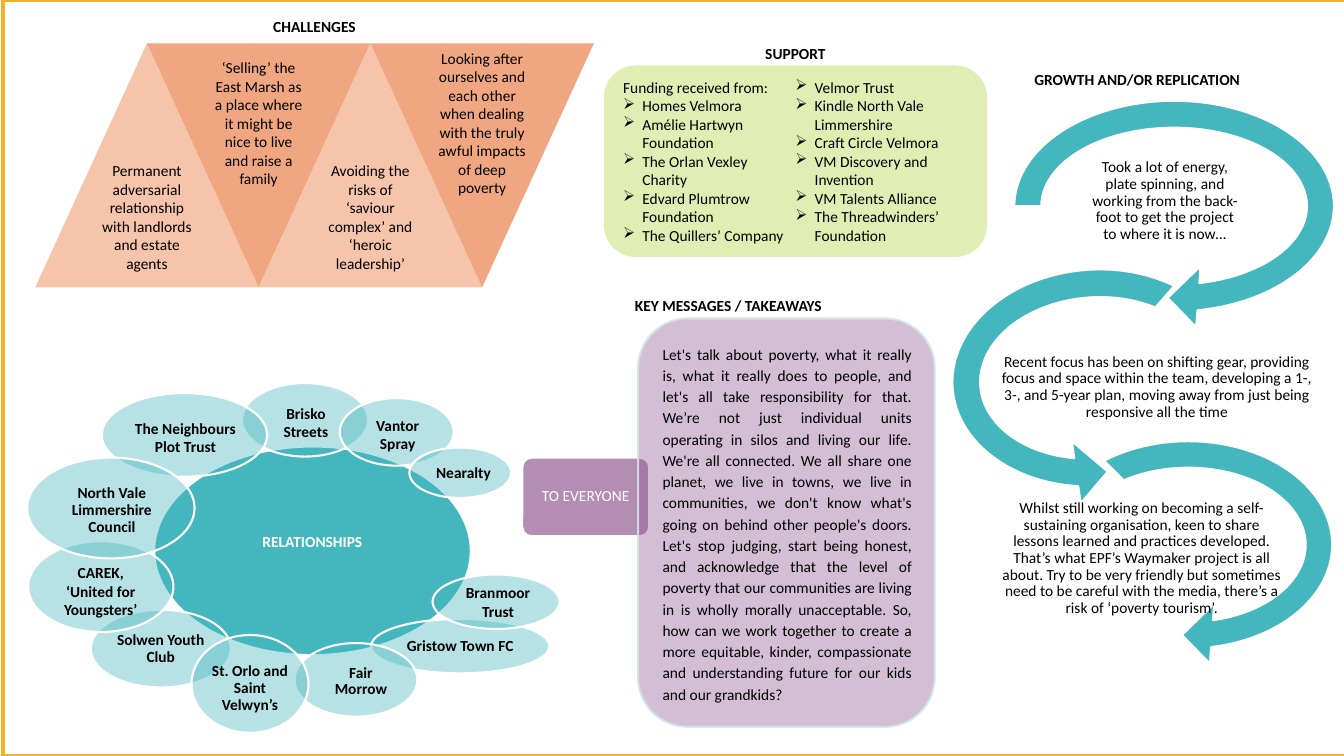
from lxml import etree
from pptx import Presentation
from pptx.dml.color import RGBColor
from pptx.enum.shapes import MSO_SHAPE
from pptx.enum.text import MSO_ANCHOR, PP_ALIGN
from pptx.oxml.ns import qn
from pptx.util import Inches, Pt

OVAL = MSO_SHAPE.OVAL
RECT = MSO_SHAPE.RECTANGLE
ROUND = MSO_SHAPE.ROUNDED_RECTANGLE
PEAK = MSO_SHAPE.ISOSCELES_TRIANGLE
MERGE = MSO_SHAPE.FLOWCHART_MERGE
ARC = MSO_SHAPE.CIRCULAR_ARROW
LEFT_ARC = MSO_SHAPE.LEFT_CIRCULAR_ARROW
TOP, MIDDLE = MSO_ANCHOR.TOP, MSO_ANCHOR.MIDDLE
LEFT, CENTER = PP_ALIGN.LEFT, PP_ALIGN.CENTER
RIGHT, JUSTIFY = PP_ALIGN.RIGHT, PP_ALIGN.JUSTIFY

FONT = "Calibri"
SIZE = 11
OVAL_PAD = 0.146
COLORS = {
    "black": "000000", "white": "FFFFFF", "gold": "F5B02A",
    "green": "AACE2E", "peach": "F5C4AB", "orange": "F0A781",
    "teal": "44B6BD", "purple": "935E94", "ice": "CFE5E8",
}

FUNDERS = [
    "Homes Velmora", "Amélie Hartwyn Foundation", "The Orlan Vexley Charity",
    "Edvard Plumtrow Foundation", "The Quillers’ Company", "Velmor Trust",
    "Kindle North Vale Limmershire", "Craft Circle Velmora",
    "VM Discovery and Invention", "VM Talents Alliance",
    "The Threadwinders’ Foundation",
]
RISKS = [
    "Permanent adversarial relationship with landlords and estate agents",
    "‘Selling’ the East Marsh as a place where it might be nice to live and raise a family",
    "Avoiding the risks of ‘saviour complex’ and ‘heroic leadership’",
    "Looking after ourselves and each other when dealing with the truly awful impacts of deep poverty",
]
STAGES = [
    (ARC, (0.71, 0.18, 3.51, 2.43), 0, (45, 108), (1.64, 0.68, 1.47, 1.33),
     "Took a lot of energy, plate spinning, and working from the back-foot to get the project to where it is now…"),
    (LEFT_ARC, (0.09, 1.85, 3.17, 2.5), 355.9, (63, 189), (0.71, 2.54, 3.17, 1.3),
     "Recent focus has been on shifting gear, providing focus and space within the team, developing a 1-, 3-, and 5-year plan, moving away from just being responsive all the time"),
    (ARC, (1.01, 3.56, 3.19, 2.39), 0, (45, 135), (0.73, 3.94, 2.83, 1.9),
     "Whilst still working on becoming a self-sustaining organisation, keen to share lessons learned and practices developed. That’s what EPF’s Waymaker project is all about. Try to be very friendly but sometimes need to be careful with the media, there’s a risk of ‘poverty tourism’."),
]
MESSAGE = (
    "Let's talk about poverty, what it really is, what it really does to people, and let's all take "
    "responsibility for that. We’re not just individual units operating in silos and living our life. "
    "We're all connected. We all share one planet, we live in towns, we live in communities, we don't "
    "know what's going on behind other people's doors. Let's stop judging, start being honest, and "
    "acknowledge that the level of poverty that our communities are living in is wholly morally "
    "unacceptable. So, how can we work together to create a more equitable, kinder, compassionate and "
    "understanding future for our kids and our grandkids?"
)
PARTNERS = [
    ("Gristow Town FC", (3.41, 2.34, 1.77, 0.54), (0.12, 0.12), 0, 0.9, CENTER),
    ("Fair Morrow", (2.65, 2.58, 1.22, 0.73), (0.36, 0.26), 0.03, 0.9, CENTER),
    ("Solwen Youth Club", (0.63, 2.25, 1.39, 0.77), (0.12, 0.12), 0.01, 0.9, CENTER),
    ("St. Orlo and Saint Velwyn’s", (1.63, 2.5, 1.16, 0.97), (0.16, 0.12), 0.09, 0.9, CENTER),
    ("CAREK, ‘United for Youngsters’", (0.01, 1.57, 1.44, 0.9), (0.24, 0.24), 0.09, 1, CENTER),
    ("Brisko Streets", (2.13, 0, 1.25, 0.73), (0.31, 0.29), 0.05, 1, CENTER),
    ("Vantor Spray", (3.1, 0.15, 1.13, 0.67), (0.31, 0.29), 0.05, 1, CENTER),
    ("Nearalty", (3.79, 0.64, 1.01, 0.5), (0.12, 0.2), 0, 1, RIGHT),
    ("The Neighbours Plot Trust", (0.74, 0.1, 1.64, 0.83), (0.31, 0.29), 0.05, 1, CENTER),
    ("North Vale Limmershire Council", (0, 0.74, 1.66, 1), (0.31, 0.29), 0.05, 0.9, CENTER),
    ("Branmoor Trust", (4.02, 1.9, 1.26, 0.54), (0.26, 0.22), 0, 1, CENTER),
]


def shift(box, part):
    return box[0] + part[0], box[1] + part[1], part[2], part[3]


def fade(fill, alpha):
    color = fill._xPr.find(qn("a:solidFill"))[0]
    etree.SubElement(color, qn("a:alpha"), val=str(alpha * 1000))


def draw(slide, kind, box, fill=None, alpha=100, line=None, width=1.5):
    shape = slide.shapes.add_shape(kind, *map(Inches, box))
    shape.shadow.inherit = False
    if fill:
        shape.fill.solid()
        shape.fill.fore_color.rgb = RGBColor.from_string(COLORS[fill])
        if alpha < 100:
            fade(shape.fill, alpha)
    else:
        shape.fill.background()
    if line:
        shape.line.color.rgb = RGBColor.from_string(COLORS[line])
        shape.line.width = Pt(width)
    else:
        shape.line.fill.background()
    return shape


def write(shape, text, align=CENTER, bold=False, color="black", space=1,
          pads=(0.1, 0.05, 0.1, 0.05), anchor=MIDDLE):
    frame = shape.text_frame
    frame.word_wrap = True
    frame.vertical_anchor = anchor
    frame.margin_left, frame.margin_top, frame.margin_right, frame.margin_bottom = map(Inches, pads)
    frame.text = text
    for para in frame.paragraphs:
        para.alignment = align
        para.line_spacing = space
        for run in para.runs:
            run.font.name = FONT
            run.font.size = Pt(SIZE)
            run.font.bold = bold
            run.font.color.rgb = RGBColor.from_string(COLORS[color])
    return frame


def title(slide, text, left, top, width):
    box = slide.shapes.add_textbox(*map(Inches, (left, top, width, 0.29)))
    write(box, text, bold=True, anchor=TOP)


def support(slide, box):
    left, top, width, height = box
    panel = draw(slide, ROUND, (left, top + 0.26, width, height - 0.26), "green", 36)
    frame = write(panel, "\n".join(["Funding received from:"] + FUNDERS), LEFT)
    frame._txBody.bodyPr.set("numCol", "2")
    for para in frame.paragraphs[1:]:
        props = para._p.get_or_add_pPr()
        props.set("marL", str(Inches(0.19)))
        props.set("indent", str(-Inches(0.19)))
        etree.SubElement(props, qn("a:buChar"), char="➢")
    title(slide, "SUPPORT", left, top, width)


def risks(slide, box):
    left, top, width, height = box
    styles = [(PEAK, "peach", (0.1, 0, 0.1, 0.19)), (MERGE, "orange", (0.1, 0.37, 0.1, 0))]
    side = width / 2.5
    for num, text in enumerate(RISKS):
        kind, fill, pads = styles[num % 2]
        part = (left + num * side / 2, top + 0.31, side, height - 0.31)
        write(draw(slide, kind, part, fill), text, pads=pads)
    title(slide, "CHALLENGES", left, top, width)


def growth(slide, box):
    for kind, part, turn, ends, area, text in STAGES:
        arrow = draw(slide, kind, shift(box, part), "teal", line="white")
        arrow.rotation = turn
        for num, value in enumerate((0.11, 11.42, *ends, 0.125)):
            arrow.adjustments[num] = value
        note = slide.shapes.add_textbox(*map(Inches, shift(box, area)))
        write(note, text, space=0.9, pads=(0.01,) * 4)
    title(slide, "GROWTH AND/OR REPLICATION", *box[:3])


def message(slide, box):
    left, top, width, height = box
    tag = draw(slide, ROUND, (left, top + 1.65, 1.26, 0.78), "purple", 70, "white")
    tag.adjustments[0] = 0.12
    write(tag, "TO EVERYONE", color="white", space=0.9)
    panel = draw(slide, ROUND, (left + 1.15, top + 0.27, width - 1.15, height - 0.27),
                 "purple", 40, "ice")
    fade(panel.line.fill, 90)
    write(panel, MESSAGE, JUSTIFY, space=1.15, pads=(0.1, 0.05, 0.08, 0.05))
    title(slide, "KEY MESSAGES / TAKEAWAYS", left, top, width)


def links(slide, box):
    hub = draw(slide, OVAL, shift(box, (1.26, 0.63, 3.14, 2.07)), "teal", line="white")
    write(hub, "RELATIONSHIPS", bold=True, color="white", space=0.9, pads=(0, 0, 0, 0.17))
    for text, part, sides, drop, space, align in PARTNERS:
        bubble = draw(slide, OVAL, shift(box, part), "teal", 39, "white")
        start, end = (max(0, side - OVAL_PAD * part[2]) for side in sides)
        write(bubble, text, align, True, space=space, pads=(start, drop, end, 0))


def main():
    deck = Presentation()
    deck.slide_width, deck.slide_height = Inches(13.33), Inches(7.5)
    slide = deck.slides.add_slide(deck.slide_layouts[6])
    support(slide, (5.99, 0.39, 3.8, 2.16))
    draw(slide, RECT, (0.03, 0, 13.33, 7.5), line="gold", width=3)
    risks(slide, (0.35, 0.12, 5.54, 2.73))
    growth(slide, (9.18, 0.65, 4.2, 5.95))
    message(slide, (5.18, 2.89, 4.09, 4.32))
    links(slide, (0.27, 3.8, 5.28, 3.47))
    deck.save("out.pptx")


if __name__ == "__main__":
    main()
